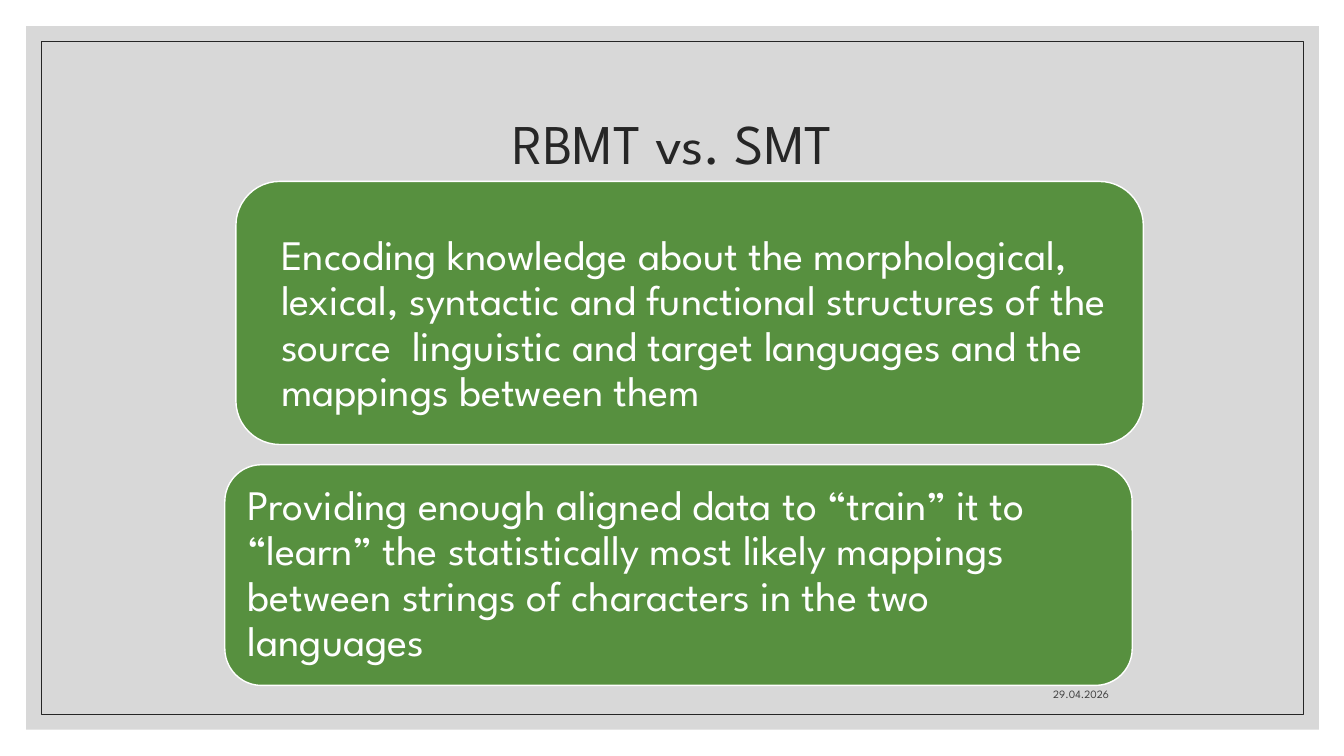
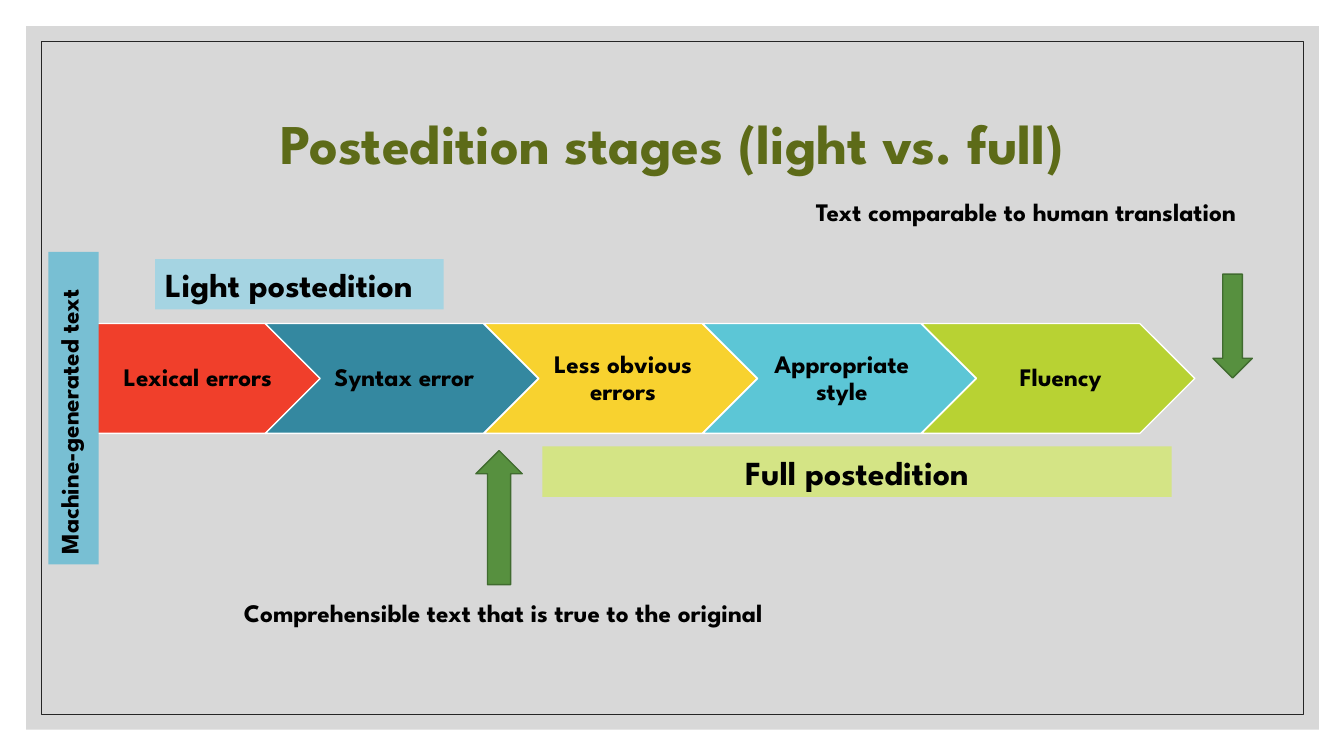
from lxml.etree import SubElement
from pptx import Presentation
from pptx.dml.color import RGBColor
from pptx.enum.shapes import MSO_SHAPE
from pptx.enum.text import MSO_ANCHOR, PP_ALIGN
from pptx.oxml.ns import qn
from pptx.util import Pt

PX = 9144
FONT = "League Spartan"
WHITE, BLACK, INK, GREEN = "FFFFFF", "000000", "262626", "57903F"
GREEN_EDGE, OLIVE, GREY = "406B2F", "5D6B18", "404040"
TOP, MIDDLE, BOTTOM = MSO_ANCHOR.TOP, MSO_ANCHOR.MIDDLE, MSO_ANCHOR.BOTTOM
LEFT, CENTER, RIGHT = PP_ALIGN.LEFT, PP_ALIGN.CENTER, PP_ALIGN.RIGHT


def add_shape(slide, kind, box, fill=None, line=None, width=1):
    shape = slide.shapes.add_shape(kind, *[value * PX for value in box])
    shape.shadow.inherit = False
    if fill:
        shape.fill.solid()
        shape.fill.fore_color.rgb = RGBColor.from_string(fill)
    else:
        shape.fill.background()
    if line:
        shape.line.color.rgb = RGBColor.from_string(line)
        shape.line.width = Pt(width)
    else:
        shape.line.fill.background()
    return shape


def write(shape, text, size, color, bold=True, align=LEFT, anchor=TOP,
          spacing=1.0, margins=(10, 5, 10, 5)):
    frame = shape.text_frame
    frame.word_wrap = True
    frame.vertical_anchor = anchor
    (frame.margin_left, frame.margin_top,
     frame.margin_right, frame.margin_bottom) = [value * PX for value in margins]
    frame.text = text
    paragraph = frame.paragraphs[0]
    paragraph.alignment = align
    paragraph.line_spacing = spacing
    paragraph.font.name = FONT
    paragraph.font.size = Pt(size)
    paragraph.font.bold = bold
    paragraph.font.color.rgb = RGBColor.from_string(color)


presentation = Presentation()
presentation.slide_width = 1333 * PX
presentation.slide_height = 750 * PX
layout = presentation.slide_layouts[5]

titles = [
    ("RBMT vs. SMT", INK, False),
    ("Postedition stages (light vs. full)", OLIVE, True),
]
slides = []
for text, color, bold in titles:
    slide = presentation.slides.add_slide(layout)
    title = slide.shapes.title
    title.left, title.top, title.width, title.height = [
        value * PX for value in (117, 70, 1100, 150)]
    write(title, text, 40, color, bold, CENTER, MIDDLE, 0.9)
    slides.append(slide)
comparison, stages = slides

backdrop = add_shape(comparison, MSO_SHAPE.RECTANGLE, (26, 26, 1282, 698), "BFBFBF")
backdrop_color = backdrop.element.xpath("./p:spPr/a:solidFill/a:srgbClr")[0]
SubElement(backdrop_color, qn("a:alpha")).set("val", "60000")
frame_line = add_shape(comparison, MSO_SHAPE.RECTANGLE, (41, 41, 1252, 668),
                       line=INK, width=0.5)
for position, shape in enumerate((backdrop, frame_line), 2):
    layout.shapes.element.insert(position, shape.element)

date = comparison.shapes.add_textbox(*[value * PX for value in (794, 660, 316, 40)])
write(date, "29.04.2026", 8, GREY, False, RIGHT, BOTTOM)

panels = [
    ((223, 461, 900, 219), (12, 12, 12, 12),
     "Providing enough aligned data to “train” it to “learn” the statistically "
     "most likely mappings between strings of characters in the two languages"),
    ((234, 180, 900, 261), (32, 36, 0, 12),
     "Encoding knowledge about the morphological, lexical, syntactic and "
     "functional structures of the source  linguistic and target languages "
     "and the mappings between them"),
]
for box, margins, text in panels:
    panel = add_shape(comparison, MSO_SHAPE.ROUNDED_RECTANGLE, box, GREEN, WHITE)
    write(panel, text, 30, WHITE, False, LEFT, MIDDLE, 0.9, margins)

steps = [
    ("Lexical errors", "F03F2B"),
    ("Syntax error", "3488A0"),
    ("Less obvious errors", "F8D22F"),
    ("Appropriate style", "5CC6D6"),
    ("Fluency", "B8D233"),
]
for index, (text, color) in enumerate(steps):
    if index == 0:
        kind, left, width, inset = MSO_SHAPE.PENTAGON, 95, 223, 10
    else:
        kind, left, width, inset = MSO_SHAPE.CHEVRON, 46 + 217 * index, 271, 8
    step = add_shape(stages, kind, (left, 321, width, 109), color, WHITE)
    write(step, text, 18, BLACK, True, CENTER, MIDDLE, 0.9, (inset, 5, 3, 5))

bands = [
    ("Light postedition", (154, 257, 286, 50), "A5D4E2", 24, LEFT, "horz"),
    ("Full postedition", (538, 443, 624, 50), "D4E485", 24, CENTER, "horz"),
    ("Machine-generated text", (48, 250, 50, 310), "78BFD3", 18, LEFT, "vert270"),
]
for text, box, color, size, align, direction in bands:
    band = add_shape(stages, MSO_SHAPE.RECTANGLE, box, color)
    write(band, text, size, BLACK, align=align)
    band.element.xpath("./p:txBody/a:bodyPr")[0].set("vert", direction)

outcomes = [
    ("Comprehensible text that is true to the original", (232, 588, 582, 40), LEFT,
     MSO_SHAPE.UP_ARROW, (472, 447, 46, 133)),
    ("Text comparable to human translation", (751, 190, 485, 40), RIGHT,
     MSO_SHAPE.DOWN_ARROW, (1203, 272, 39, 103)),
]
for text, box, align, arrow, arrow_box in outcomes:
    add_shape(stages, arrow, arrow_box, GREEN, GREEN_EDGE)
    caption = stages.shapes.add_textbox(*[value * PX for value in box])
    write(caption, text, 18, BLACK, align=align)

presentation.save("out.pptx")
